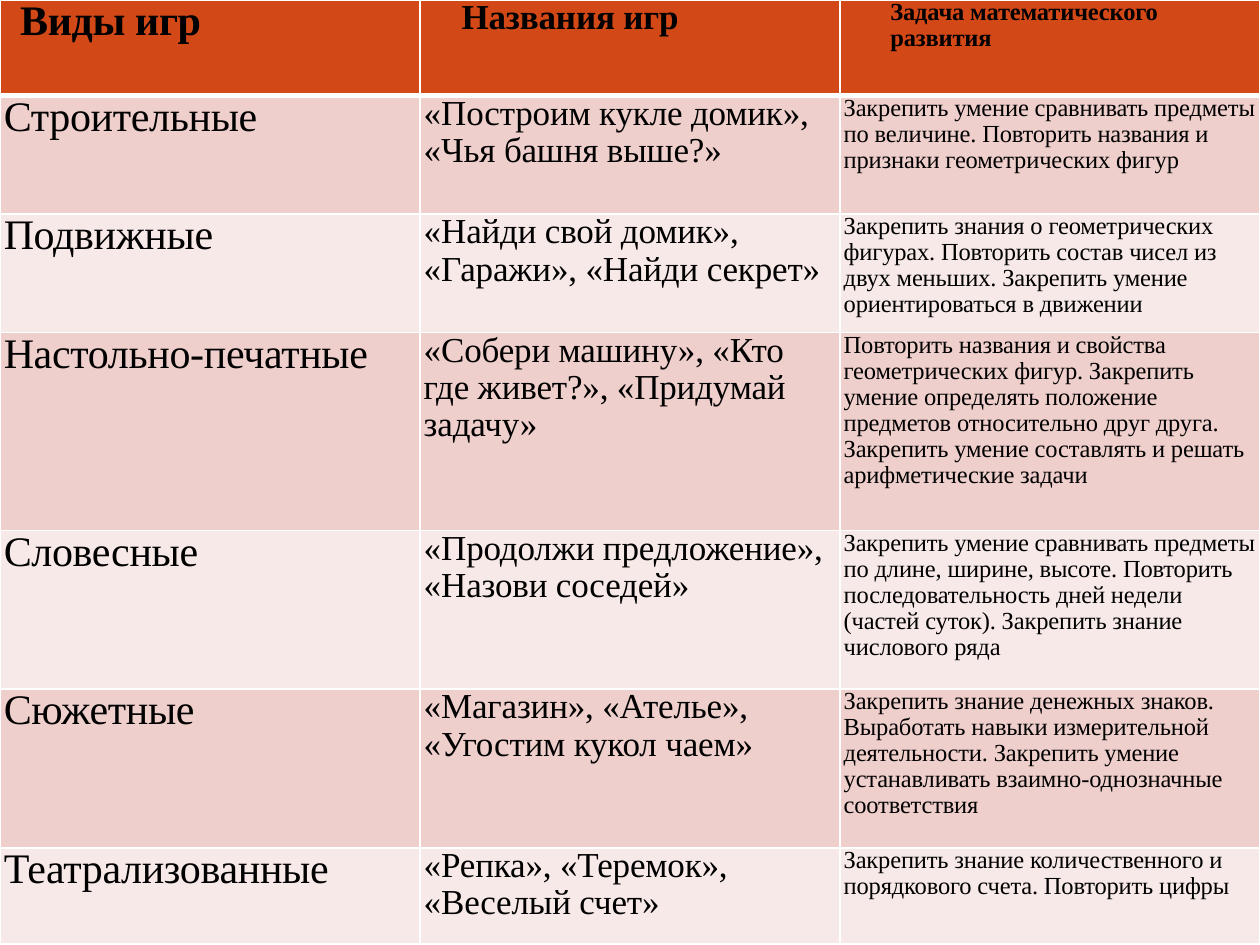
from dataclasses import dataclass

from lxml.etree import SubElement
from pptx import Presentation
from pptx.dml.color import RGBColor
from pptx.oxml.ns import qn
from pptx.util import Inches, Pt


@dataclass(frozen=True)
class Theme:
    font: str = "Times New Roman"
    text: str = "000000"
    border: str = "FFFFFF"
    header: str = "D34817"
    bands: tuple = ("EFCFCC", "F7E9E8")
    sizes: tuple = (24, 20, 14)
    spacings: tuple = (-0.2, -0.1, -0.1)
    header_indents: tuple = (0.13, 0.3, 0.37)
    line_spacing: float = 0.96
    side_margin: float = 0.03
    thin: float = 1
    thick: float = 3


class SlideBuilder:
    def __init__(self, slide, theme):
        self.slide = slide
        self.theme = theme

    def table(self, left, top, width, row_heights, rows):
        columns = len(rows[0])
        frame = self.slide.shapes.add_table(
            len(rows), columns, Inches(left), Inches(top),
            Inches(width), Inches(sum(row_heights)))
        table = frame.table
        for column in table.columns:
            column.width = Inches(width / columns)
        for row_index, (height, texts) in enumerate(zip(row_heights, rows)):
            table.rows[row_index].height = Inches(height)
            for column_index, text in enumerate(texts):
                cell = table.cell(row_index, column_index)
                self.borders(cell, row_index)
                self.cell(cell, row_index, column_index, text)

    def borders(self, cell, row_index):
        theme = self.theme
        properties = cell._tc.get_or_add_tcPr()
        for side in ("lnL", "lnR", "lnT", "lnB"):
            under_header = (row_index, side) in ((0, "lnB"), (1, "lnT"))
            width = theme.thick if under_header else theme.thin
            line = SubElement(properties, qn(f"a:{side}"), w=str(Pt(width)))
            fill = SubElement(line, qn("a:solidFill"))
            SubElement(fill, qn("a:srgbClr"), val=theme.border)

    def cell(self, cell, row_index, column_index, text):
        theme = self.theme
        is_header = row_index == 0
        color = theme.header if is_header else theme.bands[(row_index - 1) % 2]
        cell.fill.solid()
        cell.fill.fore_color.rgb = RGBColor.from_string(color)
        cell.margin_left = cell.margin_right = Inches(theme.side_margin)
        cell.margin_top = cell.margin_bottom = 0
        cell.text_frame.text = text
        para = cell.text_frame.paragraphs[0]
        para.line_spacing = theme.line_spacing
        if is_header:
            indent = Inches(theme.header_indents[column_index])
            para._p.get_or_add_pPr().set("marL", str(indent))
        span = para.runs[0]
        span.font.name = theme.font
        span.font.size = Pt(theme.sizes[column_index])
        span.font.bold = is_header
        span.font.color.rgb = RGBColor.from_string(theme.text)
        spacing = round(theme.spacings[column_index] * 100)
        span._r.get_or_add_rPr().set("spc", str(spacing))


GAMES = [
    ("Виды игр", "Названия игр", "Задача математического развития"),
    ("Строительные", "«Построим кукле домик», «Чья башня выше?»",
     "Закрепить умение сравнивать предметы по величине. Повторить "
     "названия и признаки геометрических фигур"),
    ("Подвижные", "«Найди свой домик», «Гаражи», «Найди секрет»",
     "Закрепить знания о геометрических фигурах. Повторить состав чисел "
     "из двух меньших. Закрепить умение ориентироваться в движении"),
    ("Настольно-печатные",
     "«Собери машину», «Кто где живет?», «Придумай задачу»",
     "Повторить названия и свойства геометрических фигур. Закрепить "
     "умение определять положение предметов относительно друг друга. "
     "Закрепить умение составлять и решать арифметические задачи"),
    ("Словесные", "«Продолжи предложение», «Назови соседей»",
     "Закрепить умение сравнивать предметы по длине, ширине, высоте. "
     "Повторить последовательность дней недели (частей суток). "
     "Закрепить знание числового ряда"),
    ("Сюжетные", "«Магазин», «Ателье», «Угостим кукол чаем»",
     "Закрепить знание денежных знаков. Выработать навыки измерительной "
     "деятельности. Закрепить умение устанавливать взаимно-однозначные "
     "соответствия"),
    ("Театрализованные", "«Репка», «Теремок», «Веселый счет»",
     "Закрепить знание количественного и порядкового счета. "
     "Повторить цифры"),
]
ROW_HEIGHTS = (0.76, 0.94, 0.94, 1.57, 1.26, 1.26, 0.76)


def main():
    deck = Presentation()
    deck.slide_width = Inches(10)
    deck.slide_height = Inches(7.5)
    page = deck.slides.add_slide(deck.slide_layouts[6])
    builder = SlideBuilder(page, Theme())
    builder.table(0, 0, 10, ROW_HEIGHTS, GAMES)
    deck.save("out.pptx")


if __name__ == "__main__":
    main()
